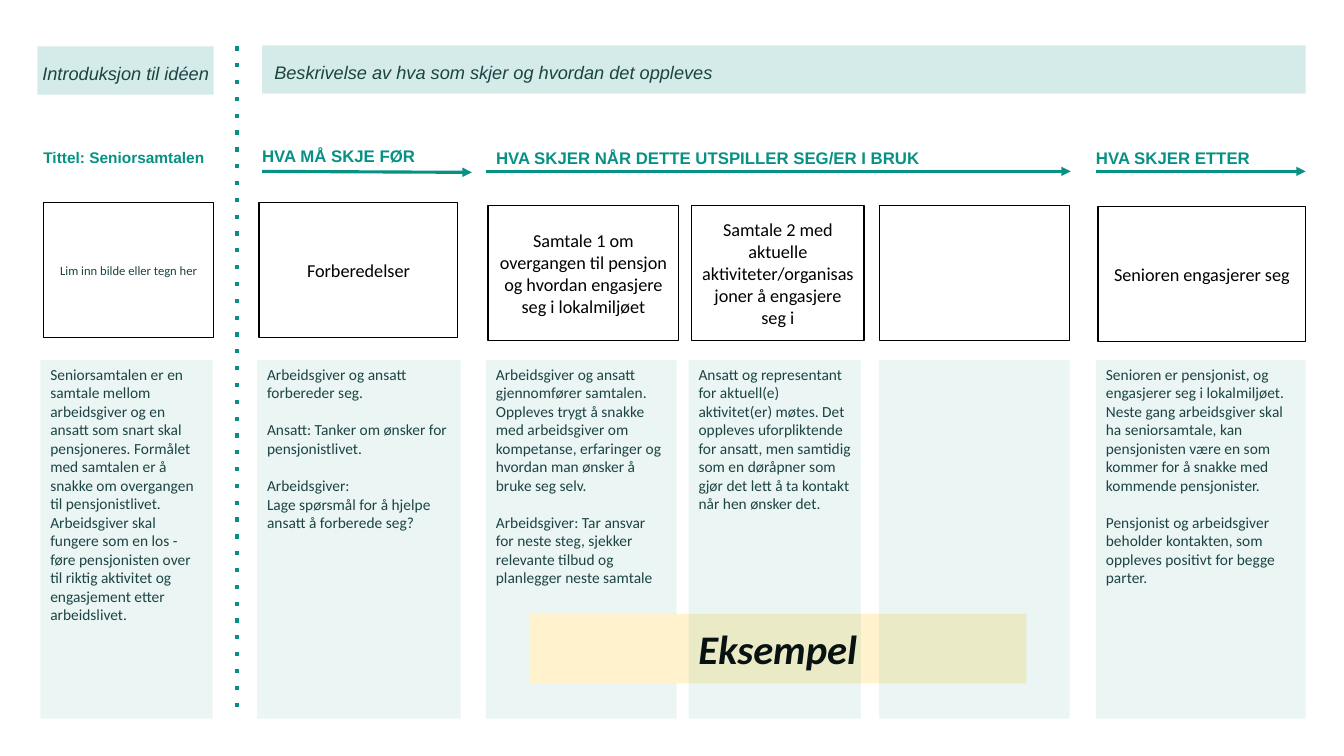
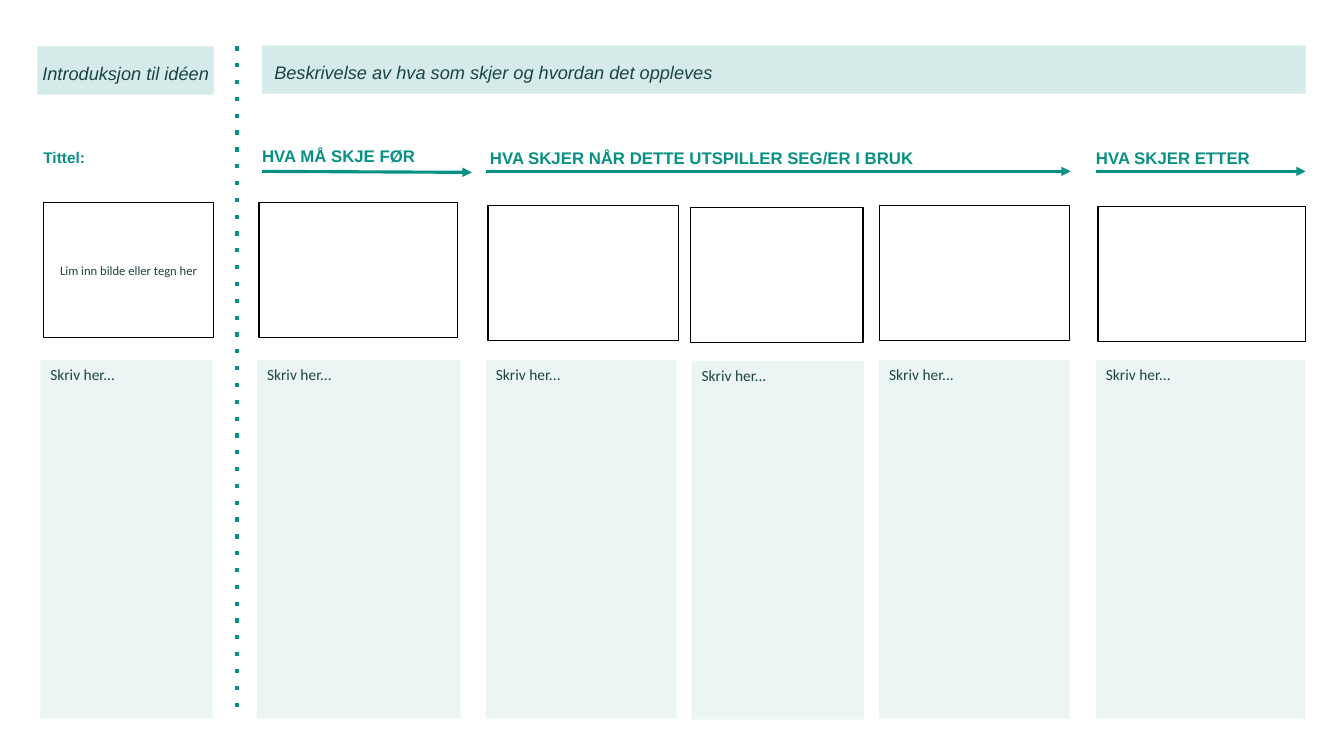
"""Build a two-slide idea storyboard: a filled-in example and an empty template."""
from lxml import etree
from pptx import Presentation
from pptx import util as u
from pptx.dml.color import RGBColor
from pptx.enum import shapes, text
from pptx.oxml.ns import qn

PX = 9144
TEAL = RGBColor(0x07, 0x91, 0x84)
TINT = RGBColor(0x47, 0xAA, 0xA2)
INK = RGBColor(0x1B, 0x44, 0x43)
CREAM = RGBColor(0xFF, 0xF2, 0xCC)
BLACK = RGBColor(0, 0, 0)
WHITE = RGBColor(0xFF, 0xFF, 0xFF)
LEFT, CENTER = text.PP_ALIGN.LEFT, text.PP_ALIGN.CENTER
TOP, MIDDLE = text.MSO_ANCHOR.TOP, text.MSO_ANCHOR.MIDDLE

BANDS = [
    ("Introduksjon til idéen", (37, 46, 175, 48), CENTER, 0),
    ("Beskrivelse av hva som skjer og hvordan det oppleves", (260, 45, 1035, 48), LEFT, 12),
]
ARROWS = [(260, 170, 468, 171), (482, 170, 1062, 170), (1087, 170, 1295, 170)]
DIVIDER = (235, 46, 235, 711)
PHASES = [
    ("HVA MÅ SKJE FØR", 260, 140, 208),
    ("HVA SKJER NÅR DETTE UTSPILLER SEG/ER I BRUK", 486, 142, 493),
    ("HVA SKJER ETTER", 1087, 142, 175),
]
FRAME_HEIGHT, NOTE_HEIGHT, NOTE_TOP = 134, 356, 357
FRAMES = [(43, 201, 169), (257, 201, 197), (484, 204, 189),
          (686, 204, 171), (872, 204, 189), (1089, 205, 206)]
NOTES = [(40, 171), (255, 202), (482, 189), (683, 171), (872, 189), (1087, 208)]
STAMP_BOX = (525, 609, 493, 69)
FRONT_NOTES = (3, 4)
BLOCK_GAP = 13.4

PICTURE_HINT = "Lim inn bilde eller tegn her"
SLIDES = [
    {
        "title": "Tittel: Seniorsamtalen",
        "middle_phase_shift": 6,
        "fourth_frame_shift": (0, 0),
        "fourth_note_shift": (0, 0),
        "frames": [
            PICTURE_HINT,
            "Forberedelser",
            "Samtale 1 om overgangen til pensjon og hvordan engasjere seg i lokalmiljøet",
            "Samtale 2 med aktuelle aktiviteter/organisasjoner å engasjere seg i",
            "",
            "Senioren engasjerer seg",
        ],
        "notes": [
            [["Seniorsamtalen er en samtale mellom arbeidsgiver og en ansatt som snart skal "
              "pensjoneres. Formålet med samtalen er å snakke om overgangen til "
              "pensjonistlivet. Arbeidsgiver skal fungere som en los - føre pensjonisten "
              "over til riktig aktivitet og engasjement etter arbeidslivet."]],
            [["Arbeidsgiver og ansatt forbereder seg."],
             ["Ansatt: Tanker om ønsker for pensjonistlivet."],
             ["Arbeidsgiver:", "Lage spørsmål for å hjelpe ansatt å forberede seg?"]],
            [["Arbeidsgiver og ansatt gjennomfører samtalen. Oppleves trygt å snakke med "
              "arbeidsgiver om kompetanse, erfaringer og hvordan man ønsker å bruke seg selv."],
             ["Arbeidsgiver: Tar ansvar for neste steg, sjekker relevante tilbud og "
              "planlegger neste samtale"]],
            [["Ansatt og representant for aktuell(e) aktivitet(er) møtes. Det oppleves "
              "uforpliktende for ansatt, men samtidig som en døråpner som gjør det lett å "
              "ta kontakt når hen ønsker det."]],
            [],
            [["Senioren er pensjonist, og engasjerer seg i lokalmiljøet.",
              "Neste gang arbeidsgiver skal ha seniorsamtale, kan pensjonisten være en som "
              "kommer for å snakke med kommende pensjonister."],
             ["Pensjonist og arbeidsgiver beholder kontakten, som oppleves positivt for "
              "begge parter."]],
        ],
        "stamp": "Eksempel",
    },
    {
        "title": "Tittel:",
        "middle_phase_shift": 0,
        "fourth_frame_shift": (-1, 2),
        "fourth_note_shift": (3, 1),
        "frames": [PICTURE_HINT] + [""] * 5,
        "notes": [[["Skriv her..."]]] * 6,
        "stamp": "",
    },
]


def px(*lengths):
    return [u.Emu(length * PX) for length in lengths]


def write(shape, blocks, size, color, name="Calibri", align=LEFT, anchor=TOP,
          insets=(10, 5, 10, 5), bold=False, italic=False, spacing=None):
    frame = shape.text_frame
    frame.word_wrap = True
    frame.auto_size = text.MSO_AUTO_SIZE.NONE
    frame.vertical_anchor = anchor
    frame.margin_left, frame.margin_top, frame.margin_right, frame.margin_bottom = px(*insets)
    lines = [(line, block_index > 0 and line_index == 0)
             for block_index, block in enumerate(blocks)
             for line_index, line in enumerate(block)]
    for index, (line, starts_block) in enumerate(lines):
        paragraph = frame.add_paragraph() if index else frame.paragraphs[0]
        paragraph.text = line
        paragraph.alignment = align
        if spacing:
            paragraph.line_spacing = spacing
        if starts_block:
            paragraph.space_before = u.Pt(BLOCK_GAP)
        font = paragraph.font
        font.name, font.size, font.bold, font.italic = name, u.Pt(size), bold, italic
        font.color.rgb = color


def add_box(slide, box, fill, opacity=100, outline=None):
    shape = slide.shapes.add_shape(shapes.MSO_SHAPE.RECTANGLE, *px(*box))
    shape.shadow.inherit = False
    shape.fill.solid()
    shape.fill.fore_color.rgb = fill
    if opacity < 100:
        color = next(shape._element.spPr.iter(qn("a:srgbClr")))
        etree.SubElement(color, qn("a:alpha"), val=str(opacity * 1000))
    if outline is None:
        shape.line.fill.background()
    else:
        shape.line.color.rgb = outline
        shape.line.width = u.Pt(1)
    return shape


def add_line(slide, ends, width, tag, **attributes):
    line = slide.shapes.add_connector(shapes.MSO_CONNECTOR.STRAIGHT, *px(*ends))
    line.line.color.rgb = TEAL
    line.line.width = u.Pt(width)
    etree.SubElement(line.line._get_or_add_ln(), qn(tag), **attributes)
    etree.SubElement(line._element.spPr, qn("a:effectLst"))


def write_heading(shape, heading, size):
    write(shape, [[heading]], size, TEAL, "Arial", insets=(0, 0, 0, 0), bold=True, spacing=1.25)


def add_headings(slide, content):
    title = slide.shapes.title
    title.left, title.top, title.width, title.height = px(43, 142, 169, 33)
    write_heading(title, content["title"], 11)
    for ends in ARROWS:
        add_line(slide, ends, 2.25, "a:tailEnd", type="triangle")
    for index, (phase, left, top, width) in enumerate(PHASES):
        shift = content["middle_phase_shift"] if index == 1 else 0
        box = slide.shapes.add_textbox(*px(left + shift, top, width, 33))
        write_heading(box, phase, 12)
    for label, box, align, inset in BANDS:
        write(add_box(slide, box, TINT, 23), [[label]], 13, INK, "Arial", align, MIDDLE,
              (inset, 0, 0, 0), italic=True, spacing=1.25)
    add_line(slide, DIVIDER, 3, "a:prstDash", val="dot")


def add_frames(slide, content):
    for index, (left, top, width) in enumerate(FRAMES):
        right, down = content["fourth_frame_shift"] if index == 3 else (0, 0)
        frame = add_box(slide, (left + right, top + down, width, FRAME_HEIGHT),
                        WHITE, outline=BLACK)
        label = content["frames"][index]
        if label:
            size, color = (9, INK) if index == 0 else (13, BLACK)
            write(frame, [[label]], size, color, align=CENTER, anchor=MIDDLE)


def add_note(slide, content, index):
    left, width = NOTES[index]
    right, down = content["fourth_note_shift"] if index == 3 else (0, 0)
    note = add_box(slide, (left + right, NOTE_TOP + down, width, NOTE_HEIGHT), TINT, 11)
    if content["notes"][index]:
        write(note, content["notes"][index], 11, INK)


def build_slide(presentation, content):
    slide = presentation.slides.add_slide(presentation.slide_layouts[5])
    add_headings(slide, content)
    add_frames(slide, content)
    for index in range(len(NOTES)):
        if index not in FRONT_NOTES:
            add_note(slide, content, index)
    if content["stamp"]:
        write(add_box(slide, STAMP_BOX, CREAM), [[content["stamp"]]], 29, BLACK,
              align=CENTER, insets=(10, 10, 10, 10), bold=True, italic=True)
    for index in FRONT_NOTES:
        add_note(slide, content, index)


def main():
    presentation = Presentation()
    presentation.slide_width, presentation.slide_height = px(1333, 750)
    for content in SLIDES:
        build_slide(presentation, content)
    presentation.save("out.pptx")


if __name__ == "__main__":
    main()
